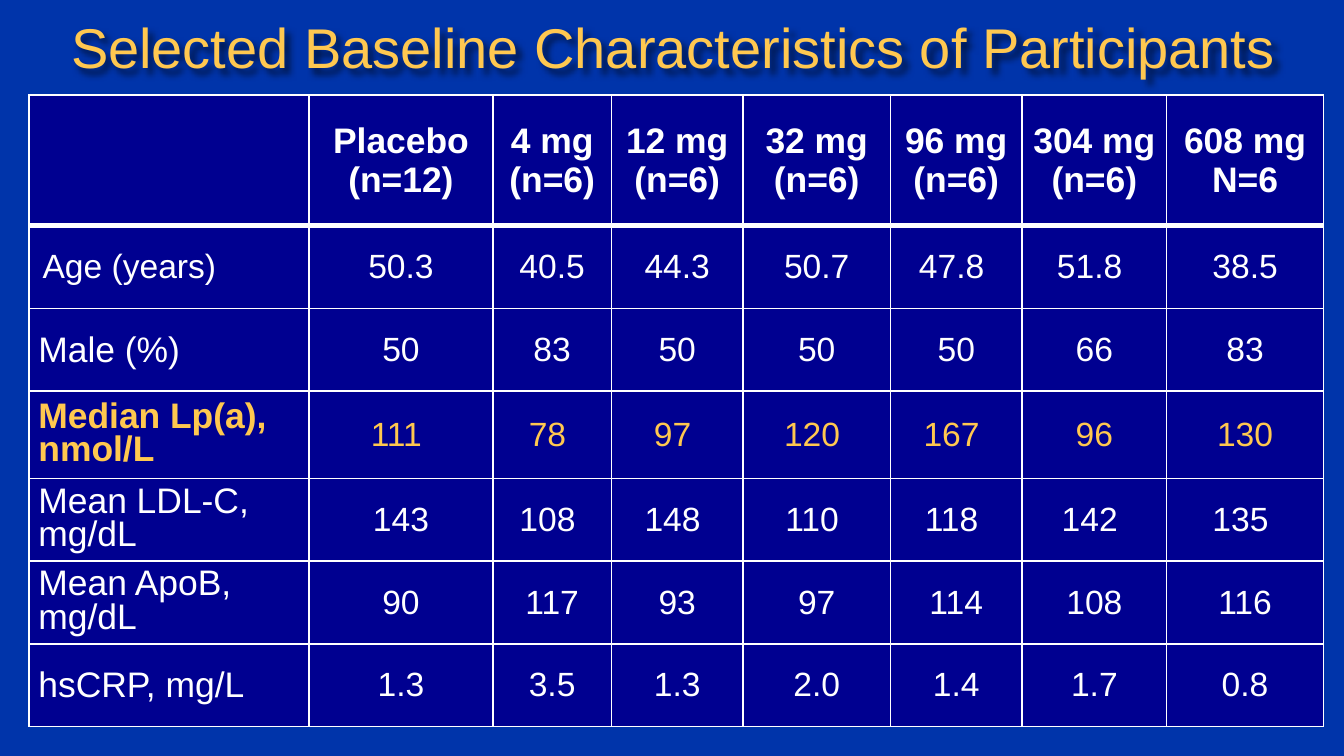
from lxml.etree import SubElement
from pptx import Presentation
from pptx.dml.color import RGBColor
from pptx.enum.text import MSO_ANCHOR, PP_ALIGN
from pptx.oxml.ns import qn
from pptx.util import Pt

BACKGROUND, NAVY, WHITE = "0034AA", "000090", "FFFFFF"
TITLE_GOLD, ROW_GOLD = "FFC850", "FFC84F"

COLUMN_WIDTHS = [150, 98.5, 63.5, 70.5, 79, 70.5, 77.5, 84]
ROW_HEIGHTS = [70, 44.3, 44.3, 46.8, 44.3, 44.3, 44.3]

# \n starts a paragraph, \v breaks a line
CHARACTERISTICS = [
    ["", "Placebo\n(n=12)", "4 mg\v(n=6)", "12 mg\v(n=6)", "32 mg\v(n=6)",
     "96 mg\v(n=6)", "304 mg\v(n=6)", "608 mg\nN=6"],
    ["Age (years)", "50.3", "40.5", "44.3", "50.7", "47.8 ", "51.8 ", "38.5"],
    ["Male (%)", "50", "83", "50", "50", "50", "66", "83"],
    ["Median Lp(a), nmol/L", "111 ", "78 ", "97 ", "120 ", "167 ", "96", "130"],
    ["Mean LDL-C, mg/dL", "143", "108 ", "148 ", "110 ", "118 ", "142 ", "135 "],
    ["Mean ApoB, mg/dL", "90", "117", "93", "97", "114", "108", "116"],
    ["hsCRP, mg/L", "1.3", "3.5", "1.3", "2.0", "1.4", "1.7", "0.8"],
]
HEADER, AGE, MEDIAN, LDL, APOB = 0, 1, 3, 4, 5


def rgb(color):
    return RGBColor.from_string(color)


def apply_format(target, values):
    for name, value in values.items():
        setattr(target, name, value)


def margins(side, end):
    return {"margin_left": Pt(side), "margin_right": Pt(side),
            "margin_top": Pt(end), "margin_bottom": Pt(end)}


def write(frame, text, color, paragraph_format, font_format):
    frame.text = text
    for paragraph in frame.paragraphs:
        apply_format(paragraph, paragraph_format)
        for run in paragraph.runs:
            apply_format(run.font, {"name": "Arial", **font_format})
            run.font.color.rgb = rgb(color)


def add_shadow(box):
    effects = SubElement(box._element.spPr, qn("a:effectLst"))
    shadow = SubElement(effects, qn("a:outerShdw"), blurRad=str(Pt(4)),
                        dist=str(Pt(3)), dir="2700000", algn="tl", rotWithShape="0")
    black = SubElement(shadow, qn("a:srgbClr"), val="000000")
    SubElement(black, qn("a:alpha"), val="60000")


def add_title(slide, text):
    title = slide.shapes.add_textbox(Pt(0.7), Pt(0), Pt(720), Pt(49.7))
    apply_format(title.text_frame, {
        "word_wrap": True, "vertical_anchor": MSO_ANCHOR.MIDDLE, **margins(7.2, 3.6)})
    write(title.text_frame, text, TITLE_GOLD,
          {"alignment": PP_ALIGN.CENTER}, {"size": Pt(30)})
    add_shadow(title)


def add_borders(cell, widths):
    properties = cell._tc.get_or_add_tcPr()
    for side, width in widths.items():
        line = SubElement(properties, qn(f"a:ln{side}"), w=str(Pt(width)))
        fill = SubElement(line, qn("a:solidFill"))
        SubElement(fill, qn("a:srgbClr"), val=WHITE)


def format_cell(cell, text, row, column):
    is_label = column == 0
    is_header = row == HEADER

    # Borders, with a heavy rule under the header
    add_borders(cell, {"L": 1, "R": 1, "T": 3 if row == AGE else 1,
                       "B": 3 if is_header else 1})
    cell.fill.solid()
    cell.fill.fore_color.rgb = rgb(NAVY)

    # Insets
    if is_label and row == AGE:
        insets = margins(7.2, 3.6)
    elif not is_label and row == LDL:
        insets = margins(3.6, 3.6)
    else:
        insets = margins(5.04, 0)
    apply_format(cell, {"vertical_anchor": MSO_ANCHOR.MIDDLE, **insets})

    # Text
    paragraph_format = {"alignment": PP_ALIGN.LEFT if is_label else PP_ALIGN.CENTER}
    if is_label and row in (MEDIAN, LDL, APOB):
        paragraph_format["line_spacing"] = 0.85
    is_large = is_header or (is_label and row != AGE)
    write(cell.text_frame, text, ROW_GOLD if row == MEDIAN else WHITE, paragraph_format,
          {"size": Pt(19 if is_large else 18),
           "bold": is_header or (is_label and row == MEDIAN)})


def add_characteristics(slide):
    table = slide.shapes.add_table(
        len(ROW_HEIGHTS), len(COLUMN_WIDTHS), Pt(15.6), Pt(51),
        Pt(sum(COLUMN_WIDTHS)), Pt(sum(ROW_HEIGHTS))).table
    apply_format(table, {"first_row": False, "horz_banding": False})
    for column, width in zip(table.columns, COLUMN_WIDTHS):
        column.width = Pt(width)
    for row, height in zip(table.rows, ROW_HEIGHTS):
        row.height = Pt(height)
    for row, texts in enumerate(CHARACTERISTICS):
        for column, text in enumerate(texts):
            format_cell(table.cell(row, column), text, row, column)


def main():
    deck = Presentation()
    apply_format(deck, {"slide_width": Pt(720), "slide_height": Pt(405)})
    slide = deck.slides.add_slide(deck.slide_layouts[6])
    slide.background.fill.solid()
    slide.background.fill.fore_color.rgb = rgb(BACKGROUND)

    add_title(slide, "Selected Baseline Characteristics of Participants")
    add_characteristics(slide)
    deck.save("out.pptx")


if __name__ == "__main__":
    main()
